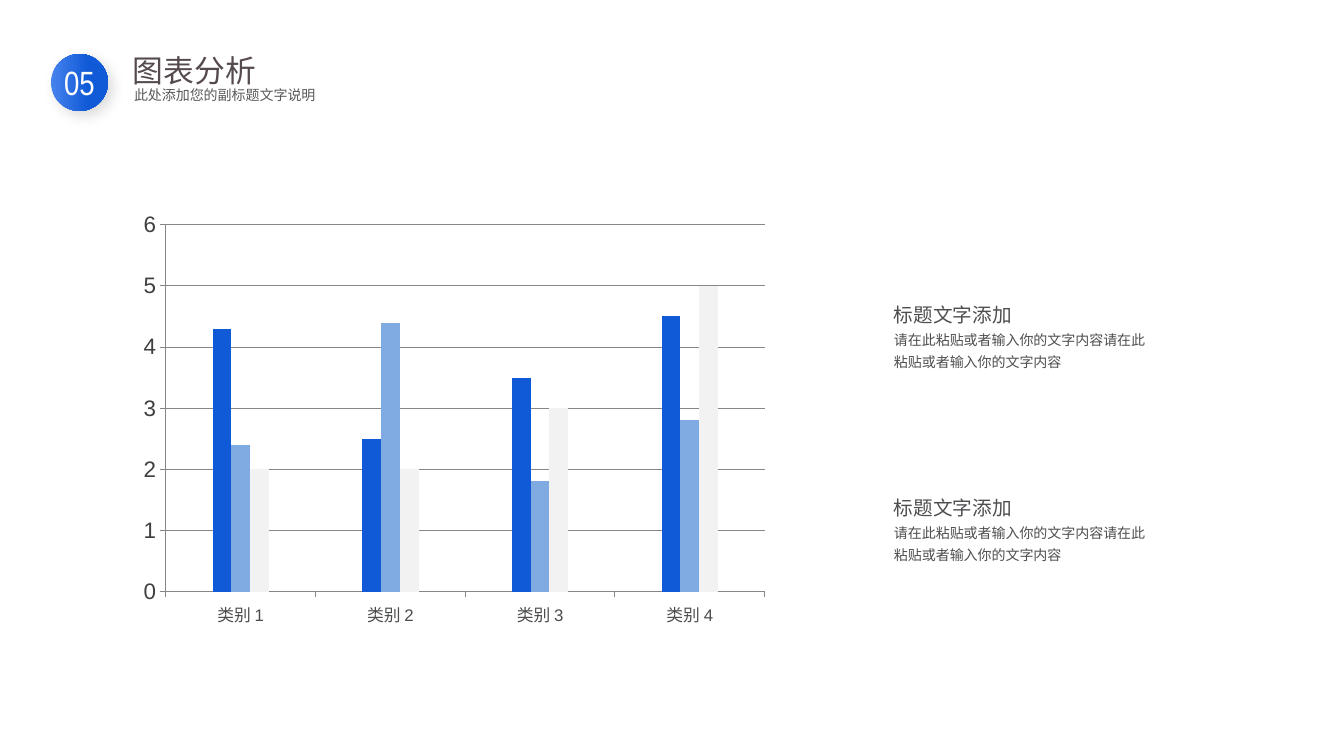
from lxml import etree
from pptx import Presentation
from pptx.chart.data import CategoryChartData
from pptx.dml.color import RGBColor
from pptx.enum.chart import XL_CHART_TYPE, XL_TICK_MARK
from pptx.enum.shapes import MSO_SHAPE
from pptx.enum.text import MSO_ANCHOR, PP_ALIGN
from pptx.oxml import parse_xml
from pptx.oxml.ns import nsdecls, qn
from pptx.util import Pt

PX = 12192000 / 1344
COLUMN = XL_CHART_TYPE.COLUMN_CLUSTERED
OUT = XL_TICK_MARK.OUTSIDE
OVAL = MSO_SHAPE.OVAL
TOP, MIDDLE = MSO_ANCHOR.TOP, MSO_ANCHOR.MIDDLE
LEFT, CENTER = PP_ALIGN.LEFT, PP_ALIGN.CENTER
SANS = "Noto Sans CJK SC"
BLUE, GRAY = "105AD7", "4F4D50"
BODY = "请在此粘贴或者输入你的文字内容请在此粘贴或者输入你的文字内容"


def px(n):
    return round(n * PX)


def rgb(code):
    return RGBColor.from_string(code)


def place(shape, box):
    shape.left, shape.top, shape.width, shape.height = map(px, box)


def write(shape, text, size, color, font=SANS, space=1.0, align=LEFT,
          anchor=TOP, wrap=True, inset=(10, 0)):
    frame = shape.text_frame
    frame.word_wrap = wrap
    frame.vertical_anchor = anchor
    frame.margin_left = frame.margin_right = px(inset[0])
    frame.margin_top = frame.margin_bottom = px(inset[1])
    para = frame.paragraphs[0]
    para.alignment = align
    para.line_spacing = space
    run = para.add_run()
    run.text = text
    run.font.size = Pt(size)
    run.font.name = font
    run.font.color.rgb = rgb(color)
    east = etree.SubElement(run.font._element, qn("a:ea"))
    east.set("typeface", font)


def label(slide, box, text, size, color, **form):
    shape = slide.shapes.add_textbox(*map(px, box))
    write(shape, text, size, color, **form)


def badge(slide, box, text):
    disc = slide.shapes.add_shape(OVAL, *map(px, box))
    disc.line.fill.background()
    disc.fill.gradient()
    disc.fill.gradient_angle = 0
    for stop, spot, color in zip(disc.fill.gradient_stops, (0.01, 0.66), ("4582ED", BLUE)):
        stop.position = spot
        stop.color.rgb = rgb(color)
    disc.shadow.inherit = False
    glow = disc._element.spPr.find(qn("a:effectLst"))
    glow.append(parse_xml(
        f'<a:outerShdw {nsdecls("a")} blurRad="{Pt(10)}" dist="{Pt(5)}" '
        'dir="2700000" algn="tl" rotWithShape="0"><a:srgbClr val="000000">'
        '<a:alpha val="15000"/></a:srgbClr></a:outerShdw>'))
    write(disc, text, 24, "FFFFFF", font="Arial Narrow", align=CENTER,
          anchor=MIDDLE, wrap=False)


def header(slide, box):
    x, y, wide, high = box
    badge(slide, (x, y, 57, 57), "05")
    title = slide.shapes.title
    place(title, (x + 72, y - 13, 145, 58))
    write(title, "图表分析", 22, "554B4F", space=1.3, wrap=False)
    label(slide, (x + 73, y + 28, wide - 73, high - 28),
          "此处添加您的副标题文字说明", 10, "595959", space=1.3)


def style(axis, size, color):
    axis.major_tick_mark = OUT
    axis.tick_labels.font.size = Pt(size)
    axis.tick_labels.font.color.rgb = rgb(color)
    axis.format.line.color.rgb = rgb("868686")
    axis.format.line.width = Pt(0.75)


def graph(slide, box):
    data = CategoryChartData()
    data.categories = [f"类别 {n}" for n in range(1, 5)]
    rows = ((4.3, 2.5, 3.5, 4.5), (2.4, 4.4, 1.8, 2.8), (2, 2, 3, 5))
    for n, row in enumerate(rows, 1):
        data.add_series(f"Series {n}", row)
    chart = slide.shapes.add_chart(COLUMN, *map(px, box), data).chart
    chart.has_legend = chart.has_title = False
    chart.font.name = "Arial"
    chart.font.size = Pt(18)
    plot = chart.plots[0]
    plot.gap_width = 498
    plot.overlap = 0
    plot.vary_by_categories = False
    for bar, color in zip(plot.series, (BLUE, "7FAAE2", "F2F2F2")):
        bar.format.fill.solid()
        bar.format.fill.fore_color.rgb = rgb(color)
    style(chart.category_axis, 12, "4A4C4D")
    axis = chart.value_axis
    style(axis, 16, "404040")
    axis.minimum_scale, axis.maximum_scale, axis.major_unit = 0, 6, 1
    axis.has_major_gridlines = True
    axis.major_gridlines.format.line.color.rgb = rgb("868686")
    axis.major_gridlines.format.line.width = Pt(0.75)
    area = chart._chartSpace.chart.plotArea
    for old in area.findall(qn("c:layout")):
        area.remove(old)
    area.insert(0, parse_xml(
        f'<c:layout {nsdecls("c")}><c:manualLayout><c:layoutTarget val="inner"/>'
        '<c:xMode val="edge"/><c:yMode val="edge"/><c:x val="0.054"/>'
        '<c:y val="0.046"/><c:w val="0.927"/><c:h val="0.851"/>'
        '</c:manualLayout></c:layout>'))


def note(slide, box):
    x, y, wide, high = box
    label(slide, (x, y, 222, 37), "标题文字添加", 14, GRAY, space=1.5)
    label(slide, (x, y + 36, wide, high - 36), BODY, 10, GRAY, space=1.28)


def main():
    deck = Presentation()
    deck.slide_width, deck.slide_height = px(1344), px(756)
    slide = deck.slides.add_slide(deck.slide_layouts[5])
    graph(slide, (131, 205, 646, 431))
    for n in range(2):
        note(slide, (884, 291 + 193 * n, 278, 98))
    header(slide, (51, 54, 414, 60))
    deck.save("out.pptx")


if __name__ == "__main__":
    main()
